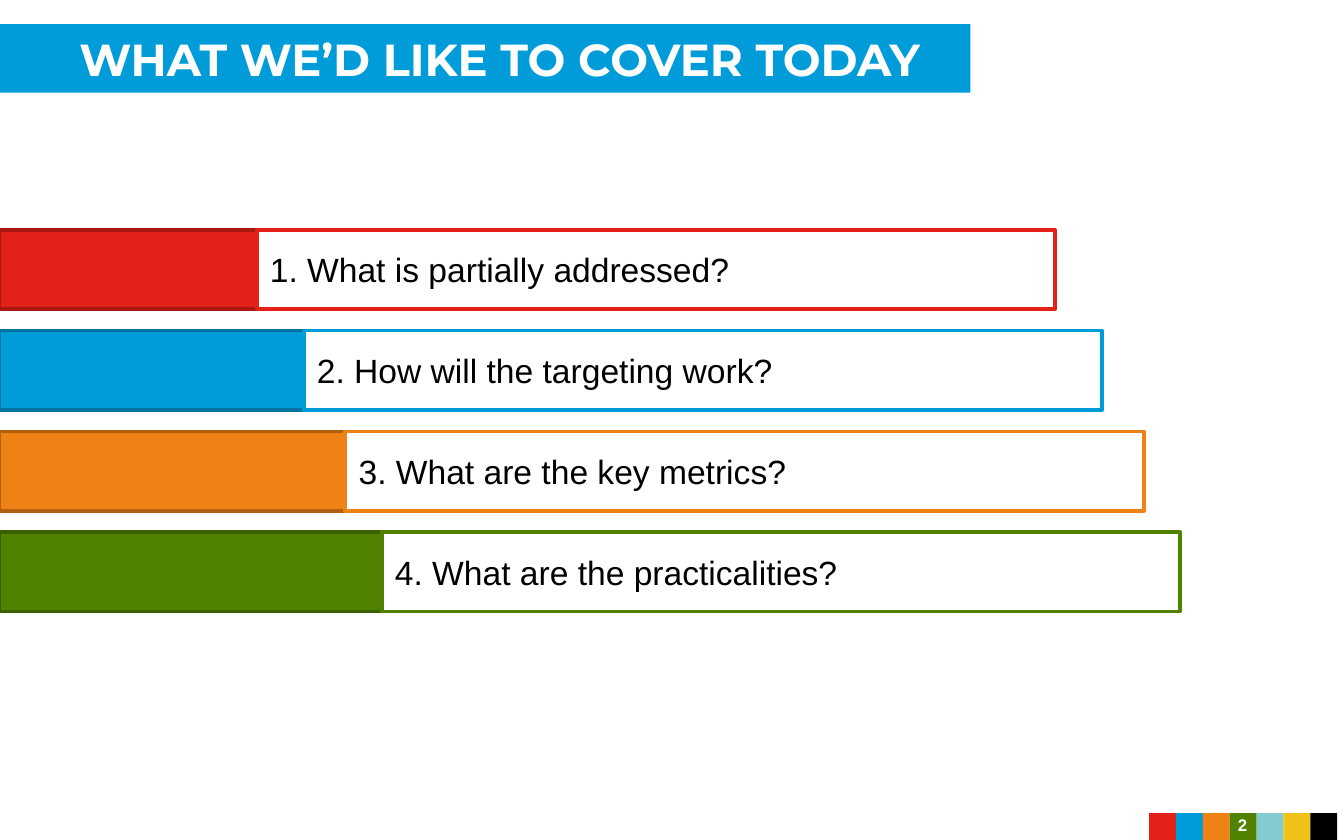
from dataclasses import dataclass

from pptx import Presentation
from pptx.dml.color import RGBColor
from pptx.enum.shapes import MSO_SHAPE
from pptx.enum.text import MSO_ANCHOR, MSO_AUTO_SIZE, PP_ALIGN
from pptx.util import Pt

RECTANGLE = MSO_SHAPE.RECTANGLE
MIDDLE = MSO_ANCHOR.MIDDLE
LEFT, CENTER = PP_ALIGN.LEFT, PP_ALIGN.CENTER
NO_AUTOFIT = MSO_AUTO_SIZE.NONE
TITLE_ONLY = 5
EMU_PER_PX = 9144  # 100 px to the inch


@dataclass(frozen=True)
class Theme:
    red: str = "E32119"
    blue: str = "009CDA"
    orange: str = "EF8214"
    green: str = "508200"
    aqua: str = "82CBD0"
    yellow: str = "EEC216"
    black: str = "000000"
    white: str = "FFFFFF"
    dark_red: str = "A81812"
    dark_blue: str = "0073A1"
    dark_orange: str = "B1600F"
    dark_green: str = "3B6000"
    title_font: str = "Montserrat"
    body_font: str = "Arial"
    title_size: int = 24
    topic_size: int = 18
    number_size: int = 9
    outline: int = 2


def px(length):
    return length * EMU_PER_PX


class SlideBuilder:
    def __init__(self, slide, theme):
        self.slide = slide
        self.theme = theme

    def set_text(self, shape, text, font, size, color, align=LEFT, bold=False, inset=10):
        frame = shape.text_frame
        frame.text = text
        frame.word_wrap = True
        frame.auto_size = NO_AUTOFIT
        frame.vertical_anchor = MIDDLE
        frame.margin_left, frame.margin_right = px(inset), px(9)
        frame.margin_top = frame.margin_bottom = px(4)
        paragraph = frame.paragraphs[0]
        paragraph.alignment = align
        paragraph.font.name = font
        paragraph.font.size = Pt(size)
        paragraph.font.bold = bold
        paragraph.font.color.rgb = RGBColor.from_string(color)

    def title(self, text, left, top, width, height):
        banner = self.slide.shapes.title
        banner.left, banner.top = px(left), px(top)
        banner.width, banner.height = px(width), px(height)
        banner.fill.solid()
        banner.fill.fore_color.rgb = RGBColor.from_string(self.theme.blue)
        self.set_text(banner, text, self.theme.title_font, self.theme.title_size,
                      self.theme.white, bold=True, inset=63)

    def box(self, left, top, width, height, fill, line=None):
        box = self.slide.shapes.add_shape(
            RECTANGLE, px(left), px(top), px(width), px(height))
        box.shadow.inherit = False
        box.fill.solid()
        box.fill.fore_color.rgb = RGBColor.from_string(fill)
        if line:
            box.line.color.rgb = RGBColor.from_string(line)
            box.line.width = Pt(self.theme.outline)
        else:
            box.line.fill.background()
        return box

    def topic(self, text, top, bar_width, label_left, color, dark):
        """Draw a coloured bar from the slide's edge with a white label over it."""
        self.box(-1, top, bar_width, 59, color, dark)
        label = self.box(label_left, top, 594, 59, self.theme.white, color)
        self.set_text(label, text, self.theme.body_font, self.theme.topic_size,
                      self.theme.black)

    def color_strip(self, colors, left, top, side):
        for index, color in enumerate(colors):
            self.box(left + index * side, top, side, side, color)

    def page_number(self, text, left, top, width, height):
        number = self.slide.shapes.add_textbox(
            px(left), px(top), px(width), px(height))
        self.set_text(number, text, self.theme.body_font, self.theme.number_size,
                      self.theme.white, align=CENTER, bold=True, inset=9)


def main():
    deck = Presentation()
    deck.slide_width, deck.slide_height = px(1000), px(625)
    theme = Theme()
    agenda = SlideBuilder(
        deck.slides.add_slide(deck.slide_layouts[TITLE_ONLY]), theme)

    agenda.color_strip(
        [theme.red, theme.blue, theme.orange, theme.green,
         theme.aqua, theme.yellow, theme.black], 855, 605, 20)
    agenda.title("WHAT WE’D LIKE TO COVER TODAY", -4, 18, 726, 51)

    topics = [
        ("1. What is partially addressed?", 706, 191, theme.red, theme.dark_red),
        ("2. How will the targeting work?", 745, 226, theme.blue, theme.dark_blue),
        ("3. What are the key metrics?", 765, 257, theme.orange, theme.dark_orange),
        ("4. What are the practicalities?", 745, 284, theme.green, theme.dark_green),
    ]
    for row, (text, bar_width, label_left, color, dark) in enumerate(topics):
        agenda.topic(text, 171 + row * 75, bar_width, label_left, color, dark)

    agenda.page_number("2", 897, 597, 55, 33)
    deck.save("out.pptx")


if __name__ == "__main__":
    main()
